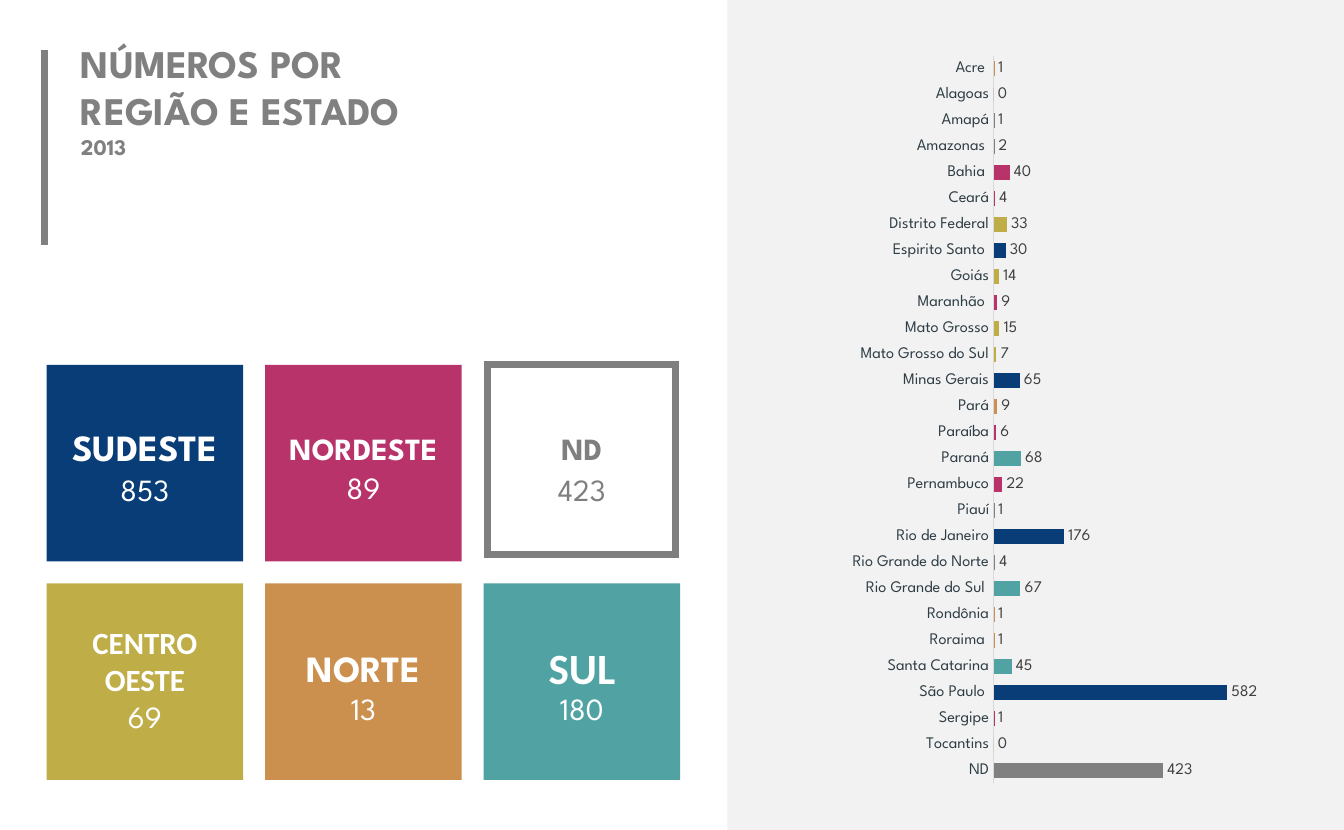
import dataclasses

import lxml.etree
import pptx
import pptx.chart.data
import pptx.dml.color
import pptx.enum.chart
import pptx.enum.shapes
import pptx.enum.text
import pptx.oxml.ns
import pptx.util


@dataclasses.dataclass(frozen=True)
class Theme:
    font: str = "League Spartan"
    plain_font: str = "Calibri"
    white: str = "FFFFFF"
    panel: str = "F2F2F2"
    grey: str = "808080"
    frame: str = "7F7F7F"
    axis_text: str = "2F3E46"
    axis_line: str = "D9D9D9"
    label: str = "404040"
    southeast: str = "083D77"
    northeast: str = "B8336A"
    midwest: str = "BFAE48"
    north: str = "CB904D"
    south: str = "51A3A3"
    title_size: float = 25.4
    year_size: float = 14.5
    value_size: float = 20
    chart_size: float = 10.5
    rule_width: float = 4.5


THEME = Theme()
WIDTH, HEIGHT = pptx.util.Cm(30.78), pptx.util.Cm(19.01)
TILE_LEFT, TILE_TOP, TILE_PITCH = 0.42, 3.29, 1.97
TILE_SIDE = 0.9
PLOT = {"x": 42, "y": 6.7, "w": 53.2, "h": 87.7}

REGIONS = [
    (0, 0, "SUDESTE", "853", 24, THEME.font, THEME.southeast, 0.25, 0.46),
    (1, 0, "NORDESTE", "89", 20, THEME.font, THEME.northeast, 0.27, 0.45),
    (2, 0, "ND", "423", 20, THEME.font, None, 0.27, 0.46),
    (0, 1, "CENTRO\nOESTE", "69", 20, THEME.plain_font, THEME.midwest, 0.16, 0.5),
    (1, 1, "NORTE", "13", 24, THEME.font, THEME.north, 0.26, 0.46),
    (2, 1, "SUL", "180", 28, THEME.plain_font, THEME.south, 0.24, 0.46),
]

STATES = [
    ("ND", 423, THEME.grey),
    ("Tocantins", 0, THEME.north),
    ("Sergipe", 1, THEME.northeast),
    ("São Paulo ", 582, THEME.southeast),
    ("Santa Catarina", 45, THEME.south),
    ("Roraima ", 1, THEME.north),
    ("Rondônia", 1, THEME.north),
    ("Rio Grande do Sul ", 67, THEME.south),
    ("Rio Grande do Norte", 4, THEME.grey),
    ("Rio de Janeiro", 176, THEME.southeast),
    ("Piauí", 1, THEME.grey),
    ("Pernambuco", 22, THEME.northeast),
    ("Paraná", 68, THEME.south),
    ("Paraíba", 6, THEME.northeast),
    ("Pará", 9, THEME.north),
    ("Minas Gerais", 65, THEME.southeast),
    ("Mato Grosso do Sul", 7, THEME.midwest),
    ("Mato Grosso", 15, THEME.midwest),
    ("Maranhão ", 9, THEME.northeast),
    ("Goiás", 14, THEME.midwest),
    ("Espirito Santo ", 30, THEME.southeast),
    ("Distrito Federal", 33, THEME.midwest),
    ("Ceará", 4, THEME.northeast),
    ("Bahia ", 40, THEME.northeast),
    ("Amazonas ", 2, THEME.grey),
    ("Amapá", 1, THEME.grey),
    ("Alagoas", 0, THEME.northeast),
    ("Acre ", 1, THEME.north),
]


def share(left, top, width, height):
    return [round(percent * side / 100)
            for percent, side in zip((left, top, width, height), (WIDTH, HEIGHT) * 2)]


def tile_area(column, row, columns, rows):
    return [pptx.util.Inches(length) for length in (
        TILE_LEFT + column * TILE_PITCH, TILE_TOP + row * TILE_PITCH,
        columns * TILE_PITCH, rows * TILE_PITCH)]


def rgb(color):
    return pptx.dml.color.RGBColor.from_string(color)


def add_child(parent, tag):
    return lxml.etree.SubElement(parent, pptx.oxml.ns.qn(tag))


class Page:
    def __init__(self, deck, theme):
        self.theme = theme
        self.slide = deck.slides.add_slide(deck.slide_layouts[5])
        self.shapes = self.slide.shapes

    def style(self, font, size, color, bold=False, name=None):
        font.name = name or self.theme.font
        font.size = pptx.util.Pt(size)
        font.bold = bold
        font.color.rgb = rgb(color)

    def title(self, area, lines):
        box = self.shapes.title
        box.left, box.top, box.width, box.height = area
        frame = box.text_frame
        frame.text = "\n".join(text for text, size in lines)
        frame.word_wrap = True
        frame.auto_size = pptx.enum.text.MSO_AUTO_SIZE.NONE
        frame.vertical_anchor = pptx.enum.text.MSO_ANCHOR.BOTTOM
        for para, (text, size) in zip(frame.paragraphs, lines):
            para.alignment = pptx.enum.text.PP_ALIGN.LEFT
            self.style(para.font, size, self.theme.grey, True)

    def rectangle(self, area, fill=None):
        box = self.shapes.add_shape(pptx.enum.shapes.MSO_SHAPE.RECTANGLE, *area)
        box.shadow.inherit = False
        if fill:
            box.fill.solid()
            box.fill.fore_color.rgb = rgb(fill)
            box.line.fill.background()
        else:
            box.fill.background()
            box.line.color.rgb = rgb(self.theme.frame)
            box.line.width = pptx.util.Pt(self.theme.rule_width)
            outline = box.element.spPr.find(pptx.oxml.ns.qn("a:ln"))
            add_child(outline, "a:miter").set("lim", "800000")

    def text(self, area, text, size, color, bold=False, name=None):
        frame = self.shapes.add_textbox(*area).text_frame
        frame.word_wrap = True
        frame.auto_size = pptx.enum.text.MSO_AUTO_SIZE.SHAPE_TO_FIT_TEXT
        frame.text = text
        for para in frame.paragraphs:
            para.alignment = pptx.enum.text.PP_ALIGN.CENTER
            self.style(para.font, size, color, bold, name)

    def rule(self, area):
        left, top, width, height = area
        line = self.shapes.add_connector(
            pptx.enum.shapes.MSO_CONNECTOR.STRAIGHT, left, top, left + width, top + height)
        line.line.color.rgb = rgb(self.theme.grey)
        line.line.width = pptx.util.Pt(self.theme.rule_width)
        add_child(line.element.spPr, "a:effectLst")

    def region(self, column, row, name, value, size, font, fill, name_top, value_top):
        if fill:
            self.rectangle(tile_area(column, row, TILE_SIDE, TILE_SIDE), fill)
        else:
            self.rectangle(tile_area(column + 0.02, row, 0.86, 0.87))
        color = self.theme.white if fill else self.theme.frame
        name_height = 0.39 if "\n" in name else 0.25
        self.text(tile_area(column, row + name_top, TILE_SIDE, name_height),
                  name, size, color, True, font)
        self.text(tile_area(column, row + value_top, TILE_SIDE, 0.22),
                  value, self.theme.value_size, color)

    def bar_chart(self, area, states, limit):
        data = pptx.chart.data.CategoryChartData()
        data.categories = [state for state, value, color in states]
        data.add_series("Series 1", [value for state, value, color in states])
        chart = self.shapes.add_chart(
            pptx.enum.chart.XL_CHART_TYPE.BAR_CLUSTERED, *area, data).chart
        chart.has_legend = False
        chart.has_title = False
        self.style(chart.font, self.theme.chart_size, self.theme.label)

        values = chart.value_axis
        values.minimum_scale, values.maximum_scale = 0, limit
        values.has_major_gridlines = False
        values.visible = False
        names = chart.category_axis
        names.major_tick_mark = pptx.enum.chart.XL_TICK_MARK.NONE
        names.format.line.color.rgb = rgb(self.theme.axis_line)
        names.format.line.width = pptx.util.Pt(0.75)
        self.style(names.tick_labels.font, self.theme.chart_size, self.theme.axis_text)

        plot = chart.plots[0]
        plot.gap_width = 80
        plot.vary_by_categories = False
        plot.has_data_labels = True
        labels = plot.data_labels
        labels.show_value = True
        labels.position = pptx.enum.chart.XL_LABEL_POSITION.OUTSIDE_END
        self.style(labels.font, self.theme.chart_size, self.theme.label)
        for index, (state, value, color) in enumerate(states):
            fill = plot.series[0].points[index].format.fill
            fill.solid()
            fill.fore_color.rgb = rgb(color)
        self.place_plot(chart)

    def place_plot(self, chart):
        qn = pptx.oxml.ns.qn
        plot_area = chart.element.find(".//" + qn("c:plotArea"))
        for layout in plot_area.findall(qn("c:layout")):
            plot_area.remove(layout)
        layout = lxml.etree.Element(qn("c:layout"))
        plot_area.insert(0, layout)
        manual = add_child(layout, "c:manualLayout")
        settings = {"layoutTarget": "inner", "xMode": "edge", "yMode": "edge"}
        settings.update((key, str(percent / 100)) for key, percent in PLOT.items())
        for tag, value in settings.items():
            add_child(manual, "c:" + tag).set("val", value)


def main():
    deck = pptx.Presentation()
    deck.slide_width, deck.slide_height = WIDTH, HEIGHT
    page = Page(deck, THEME)
    page.rectangle(share(54.13, 0, 45.87, 100), THEME.panel)
    page.bar_chart(share(57.43, 0, 39.27, 100), STATES, 700)
    page.title(share(5.2, 3.75, 29.2, 16.2), [
        ("NÚMEROS POR REGIÃO E ESTADO", THEME.title_size), ("2013", THEME.year_size)])
    page.rule(share(3.3, 6, 0, 23.5))
    for region in REGIONS:
        page.region(*region)
    deck.save("out.pptx")


if __name__ == "__main__":
    main()
